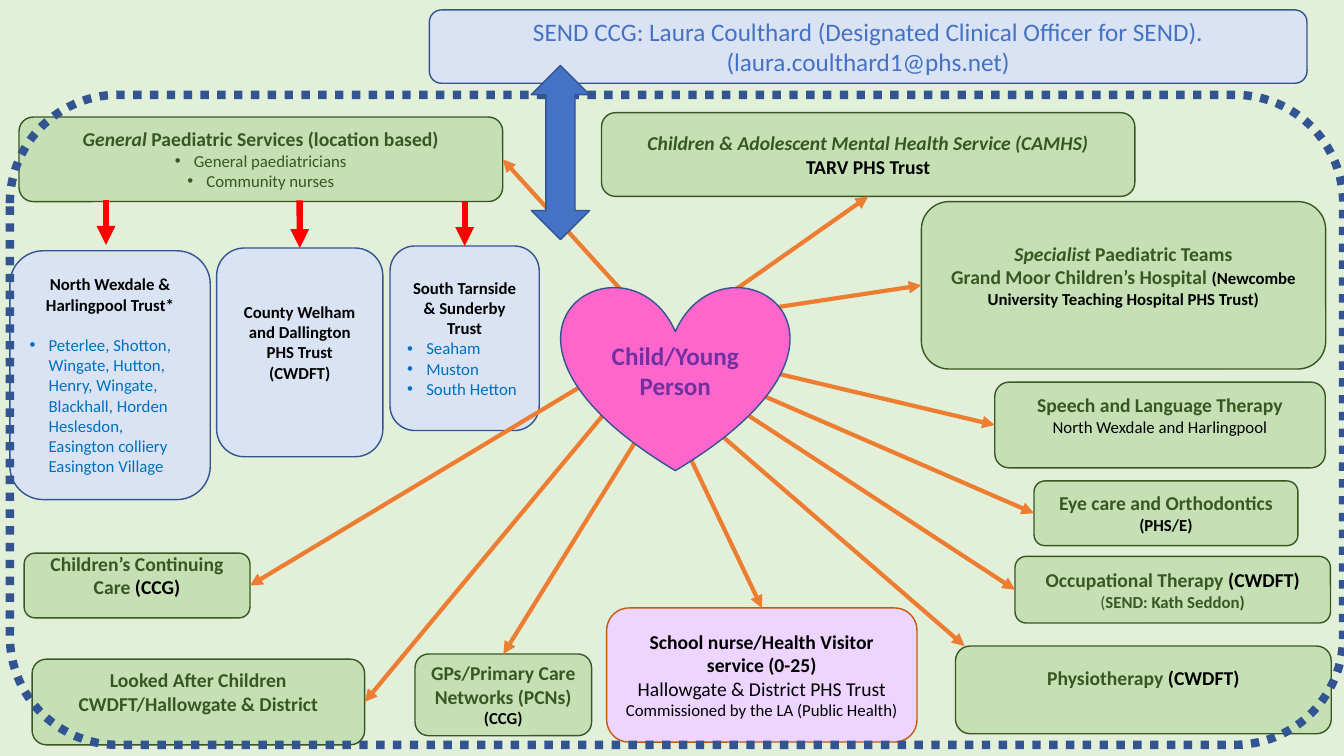
from lxml.etree import SubElement
from pptx import Presentation
from pptx.dml.color import RGBColor as RGB
from pptx.enum.dml import MSO_LINE as DASH
from pptx.enum.shapes import MSO_CONNECTOR as CONN, MSO_SHAPE as SHAPE
from pptx.enum.text import MSO_ANCHOR as ANCHOR, PP_ALIGN as ALIGN
from pptx.oxml.ns import qn
from pptx.util import Cm, Pt

THEME = {
    "font": "Calibri",
    "background": "E2F0D9",
    "spoke": ("ED7D31", 3),
    "drop": ("FF0000", 4.5),
    "frame": ("325491", 6),
    "boxes": {
        "green": ("C5E0B4", "385723"),
        "blue": ("DAE3F3", "325491"),
        "lilac": ("EDD5FF", "C55A11"),
        "pink": ("FF66CC", "325491"),
        "strong": ("4472C4", "325491"),
    },
    "text": {
        "head": (14, "385723", True, False),
        "lead": (14, "385723", True, True),
        "tag": (14, "000000", True, False),
        "note": (12, "000000", True, False),
        "plain": (14, "000000", False, False),
        "small": (12, "000000", False, False),
        "service": (12, "385723", False, False),
        "place": (12, "0070C0", False, False),
        "paren": (12, "385723", False, False),
        "contact": (12, "385723", True, False),
        "core": (18, "7030A0", True, False),
        "banner": (18, "4472C4", False, False),
    },
    "bullets": {"service": ALIGN.CENTER, "place": ALIGN.LEFT},
}

prs = Presentation()
prs.slide_width, prs.slide_height = Cm(33.87), Cm(19.05)
s = prs.slides.add_slide(prs.slide_layouts[6])
s.background.fill.solid()
s.background.fill.fore_color.rgb = RGB.from_string(THEME["background"])


def add_box(preset, place, look, paragraphs=(), lift=0):
    sp = s.shapes.add_shape(preset, *[Cm(v) for v in place])
    sp.shadow.inherit = False
    fill, line = THEME["boxes"][look]
    sp.fill.solid()
    sp.fill.fore_color.rgb = RGB.from_string(fill)
    sp.line.color.rgb = RGB.from_string(line)
    sp.line.width = Pt(1)
    tf = sp.text_frame
    tf.word_wrap = True
    tf.vertical_anchor = ANCHOR.MIDDLE
    tf.margin_bottom = Cm(0.13 + lift)
    for i, runs in enumerate(paragraphs):
        p = tf.add_paragraph() if i else tf.paragraphs[0]
        p.text = runs[0][0]
        for text, _ in runs[1:]:
            p.add_run().text = text
        for r, (_, style) in zip(p.runs, runs):
            size, color, r.font.bold, r.font.italic = THEME["text"][style]
            r.font.name = THEME["font"]
            r.font.size = Pt(size)
            r.font.color.rgb = RGB.from_string(color)
        first = runs[0][1]
        p.alignment = THEME["bullets"].get(first, ALIGN.CENTER)
        if first in THEME["bullets"]:
            pPr = p._p.get_or_add_pPr()
            pPr.set("marL", str(Cm(0.48)))
            pPr.set("indent", str(Cm(-0.48)))
            SubElement(pPr, qn("a:buFont")).set("typeface", "Arial")
            SubElement(pPr, qn("a:buChar")).set("char", "•")
    return sp


def add_arrow(start, end, look):
    c = s.shapes.add_connector(CONN.STRAIGHT, *[Cm(v) for v in start + end])
    color, width = THEME[look]
    c.line.color.rgb = RGB.from_string(color)
    c.line.width = Pt(width)
    spPr = c.element.spPr
    SubElement(spPr.find(qn("a:ln")), qn("a:tailEnd")).set("type", "triangle")
    SubElement(spPr, qn("a:effectLst"))
    return c


BOXES = {
    "school": ((15.29, 15.32, 7.82, 3.38), "lilac", [
        [("School nurse/Health Visitor service (0-25)", "tag")],
        [("Hallowgate & District PHS Trust", "plain")],
        [("Commissioned by the LA (Public Health)", "small")]], 0),
    "occupational": ((25.58, 14.02, 7.95, 1.68), "green", [
        [("Occupational Therapy ", "head"), ("(CWDFT)", "tag")],
        [("(", "paren"), ("SEND: Kath Seddon)", "contact")]], 0),
    "physio": ((24.08, 16.28, 9.47, 2.21), "green", [
        [("Physiotherapy ", "head"), ("(CWDFT)", "tag")]], 0.6),
    "speech": ((25.07, 9.63, 8.33, 2.16), "green", [
        [("Speech and Language Therapy", "head")],
        [("North Wexdale and Harlingpool", "small")]], 0.51),
    "north": ((0.25, 6.32, 5.05, 6.27), "blue", [
        [("North Wexdale & Harlingpool Trust*", "note")],
        [("Peterlee, Shotton, Wingate, Hutton, Henry, Wingate, Blackhall, Horden "
          "Heslesdon, Easington colliery Easington Village", "place")]], 0),
    "general": ((0.48, 2.95, 12.19, 2.13), "green", [
        [("General", "lead"), (" Paediatric Services (location based)", "head")],
        [("General paediatricians", "service")],
        [("Community nurses", "service")]], 0),
    "specialist": ((23.22, 5.08, 10.19, 4.22), "green", [
        [("Specialist", "lead"), (" Paediatric Teams", "head")],
        [("Grand Moor Children’s Hospital ", "head"),
         ("(Newcombe University Teaching Hospital PHS Trust)", "note")]], 0.51),
    "south": ((9.83, 6.2, 3.76, 4.65), "blue", [
        [("South Tarnside & Sunderby Trust", "note")],
        [("Seaham", "place")],
        [("Muston", "place")],
        [("South Hetton", "place")]], 0),
    "county": ((5.46, 6.25, 4.19, 5.26), "blue", [
        [("County Welham and Dallington PHS Trust (CWDFT)", "note")]], 0.51),
    "gps": ((10.46, 16.48, 4.45, 2.06), "green", [
        [("GPs/Primary Care Networks (PCNs)", "head")],
        [("(CCG)", "note")]], 0),
    "camhs": ((15.16, 2.84, 13.44, 2.11), "green", [
        [("Children & Adolescent Mental Health Service (CAMHS)", "lead")],
        [("TARV PHS Trust", "tag")]], 0),
    "continuing": ((0.61, 13.94, 5.69, 1.63), "green", [
        [("Children’s Continuing Care ", "head"), ("(CCG)", "tag")]], 0.51),
    "looked_after": ((0.81, 16.61, 8.38, 2.16), "green", [
        [("Looked After Children", "head")],
        [("CWDFT/Hallowgate & District", "head")]], 0.51),
    "eye_care": ((26.06, 12.12, 6.65, 1.63), "green", [
        [("Eye care and Orthodontics", "head")],
        [("(PHS/E)", "note")]], 0),
    "banner": ((10.82, 0.25, 22.12, 1.85), "blue", [
        [("SEND CCG: Laura Coulthard (Designated Clinical Officer for SEND).", "banner")],
        [("(laura.coulthard1@phs.net)", "banner")]], 0),
}
boxes = {name: add_box(SHAPE.ROUNDED_RECTANGLE, *box) for name, box in BOXES.items()}
boxes["north"].text_frame.paragraphs[1].space_before = Pt(14.5)

TOP, LEFT, BOTTOM, RIGHT = range(4)
JOINED = [
    ("eye_care", LEFT, (18.49, 9.65), "spoke"),
    ("specialist", LEFT, (17.53, 8.05), "spoke"),
    ("general", RIGHT, (16.46, 8.2), "spoke"),
    ("speech", LEFT, (18.77, 9.22), "spoke"),
    ("occupational", LEFT, (18.77, 10.41), "spoke"),
    ("school", TOP, (17.32, 11.38), "spoke"),
    ("camhs", BOTTOM, (17.02, 8.36), "spoke"),
    ("continuing", RIGHT, (15.88, 8.99), "spoke"),
    ("looked_after", RIGHT, (15.34, 10.29), "spoke"),
    ("gps", TOP, (16.74, 9.96), "spoke"),
    ("county", TOP, (7.55, 5.05), "drop"),
    ("south", TOP, (11.71, 5.08), "drop"),
]
for name, side, start, look in JOINED:
    add_arrow(start, start, look).end_connect(boxes[name], side)
add_arrow((18.06, 10.87), (24.31, 16.28), "spoke")
add_arrow((2.67, 5.03), (2.67, 6.17), "drop")

add_box(SHAPE.HEART, (14.15, 7.19, 5.74, 4.67), "pink", [[("Child/Young Person", "core")]])

frame = add_box(SHAPE.ROUNDED_RECTANGLE, (0.25, 2.39, 33.6, 16.38), "blue")
frame.fill.background()
color, width = THEME["frame"]
frame.line.color.rgb = RGB.from_string(color)
frame.line.width = Pt(width)
frame.line.dash_style = DASH.ROUND_DOT

add_box(SHAPE.UP_DOWN_ARROW, (13.39, 1.65, 1.47, 4.39), "strong")

prs.save("out.pptx")
